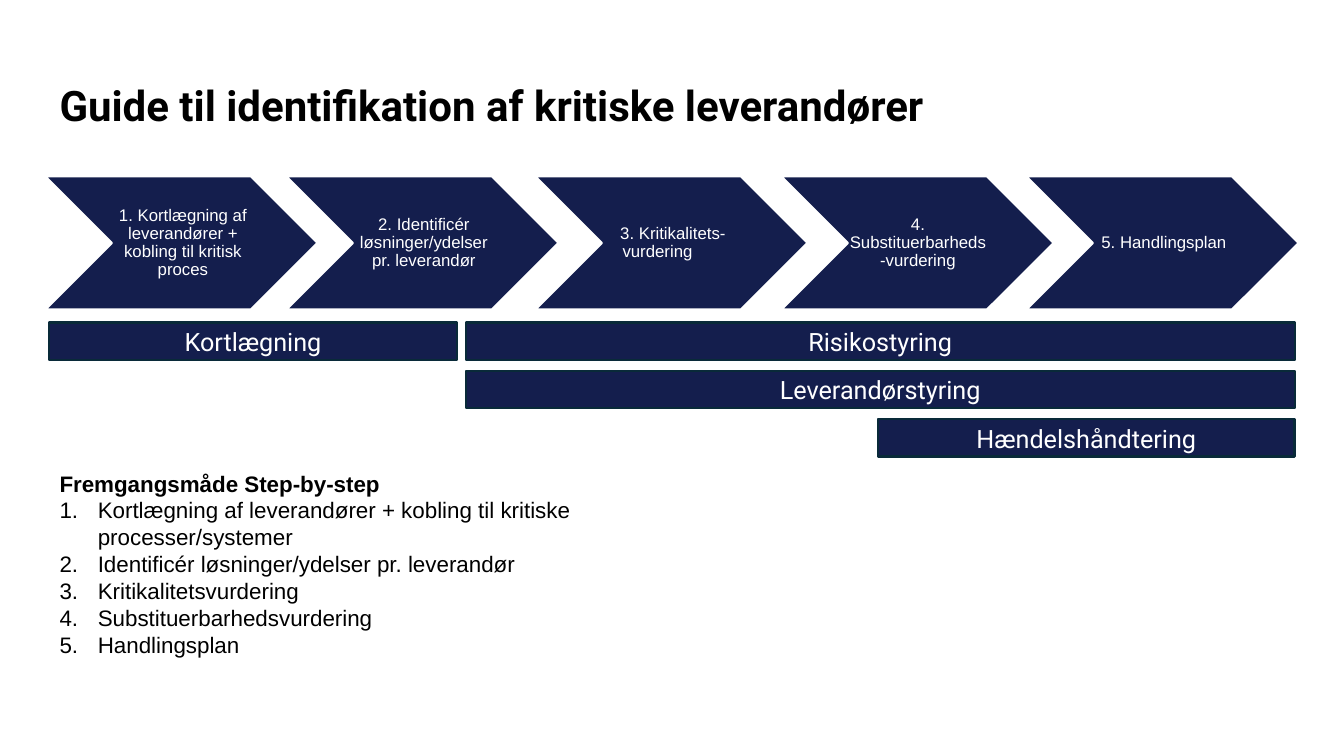
from dataclasses import dataclass

from lxml import etree
from pptx import Presentation
from pptx.dml.color import RGBColor
from pptx.enum.shapes import MSO_SHAPE
from pptx.enum.text import MSO_ANCHOR, MSO_AUTO_SIZE, PP_ALIGN
from pptx.oxml.ns import qn
from pptx.shapes.autoshape import Shape
from pptx.slide import Slide
from pptx.text.text import _Paragraph
from pptx.util import Emu, Pt

CHEVRON, RECTANGLE = MSO_SHAPE.CHEVRON, MSO_SHAPE.RECTANGLE
LEFT, CENTER = PP_ALIGN.LEFT, PP_ALIGN.CENTER
TOP, MIDDLE = MSO_ANCHOR.TOP, MSO_ANCHOR.MIDDLE
NO_AUTO_SIZE = MSO_AUTO_SIZE.NONE
EMU_PER_PX = 9144


@dataclass(frozen=True)
class Theme:
    navy: RGBColor = RGBColor(0x14, 0x1E, 0x4D)
    outline: RGBColor = RGBColor(0x09, 0x2A, 0x39)
    white: RGBColor = RGBColor(0xFF, 0xFF, 0xFF)
    black: RGBColor = RGBColor(0, 0, 0)
    heading_font: str = "Roboto"
    text_font: str = "Arial"
    title_size: int = 30
    bar_size: int = 18
    body_size: int = 16
    step_size: int = 12
    line_width: float = 1.5


@dataclass(frozen=True)
class Box:
    left: int
    top: int
    width: int
    height: int


@dataclass(frozen=True)
class Step:
    left: int
    text: str
    margins: tuple[int, int] = (5, 2)


@dataclass(frozen=True)
class Bar:
    text: str
    left: int
    right: int
    row: int


THEME = Theme()
STEP_TOP, STEP_WIDTH, STEP_HEIGHT = 175, 270, 132
BAR_TOP, BAR_HEIGHT, BAR_PITCH = 320, 37, 48
LIST_INDENT = 38

STEPS = [
    Step(45, "1. Kortlægning af leverandører + kobling til kritisk proces"),
    Step(284, "2. Identificér løsninger/ydelser pr. leverandør"),
    Step(531, "3. Kritikalitets- vurdering\t"),
    Step(775, "4. Substituerbarheds-vurdering", (1, 0)),
    Step(1018, "5. Handlingsplan"),
]
BARS = [
    Bar("Kortlægning", 49, 453, 0),
    Bar("Risikostyring", 462, 1284, 0),
    Bar("Leverandørstyring", 462, 1284, 1),
    Bar("Hændelshåndtering", 871, 1284, 2),
]
LIST_HEADING = "Fremgangsmåde Step-by-step"
LIST_ITEMS = [
    "Kortlægning af leverandører + kobling til kritiske processer/systemer",
    "Identificér løsninger/ydelser pr. leverandør",
    "Kritikalitetsvurdering",
    "Substituerbarhedsvurdering",
    "Handlingsplan",
]


def px(length: int) -> Emu:
    return Emu(length * EMU_PER_PX)


def add_run(paragraph: _Paragraph, text: str, font_name: str, size: int,
            color: RGBColor, bold: bool = False) -> None:
    run = paragraph.add_run()
    run.text = text
    run.font.name = font_name
    run.font.size = Pt(size)
    run.font.bold = bold
    run.font.color.rgb = color


def place(shape: Shape, box: Box) -> None:
    shape.left, shape.top = px(box.left), px(box.top)
    shape.width, shape.height = px(box.width), px(box.height)
    shape.text_frame.word_wrap = True
    shape.text_frame.auto_size = NO_AUTO_SIZE
    shape.text_frame.vertical_anchor = TOP


def add_panel(slide: Slide, kind: MSO_SHAPE, box: Box, line_color: RGBColor) -> Shape:
    shape = slide.shapes.add_shape(
        kind, px(box.left), px(box.top), px(box.width), px(box.height))
    shape.shadow.inherit = False
    shape.fill.solid()
    shape.fill.fore_color.rgb = THEME.navy
    shape.line.color.rgb = line_color
    shape.line.width = Pt(THEME.line_width)
    shape.text_frame.word_wrap = True
    shape.text_frame.vertical_anchor = MIDDLE
    shape.text_frame.paragraphs[0].alignment = CENTER
    return shape


def add_step(slide: Slide, step: Step) -> None:
    box = Box(step.left, STEP_TOP, STEP_WIDTH, STEP_HEIGHT)
    frame = add_panel(slide, CHEVRON, box, THEME.white).text_frame
    frame.margin_left, frame.margin_right = map(px, step.margins)
    frame.margin_top = frame.margin_bottom = px(2)
    paragraph = frame.paragraphs[0]
    paragraph.line_spacing = 0.9
    add_run(paragraph, step.text, THEME.text_font, THEME.step_size, THEME.white)


def add_bar(slide: Slide, bar: Bar) -> None:
    box = Box(bar.left, BAR_TOP + bar.row * BAR_PITCH, bar.right - bar.left, BAR_HEIGHT)
    shape = add_panel(slide, RECTANGLE, box, THEME.outline)
    add_run(shape.text_frame.paragraphs[0], bar.text,
            THEME.heading_font, THEME.bar_size, THEME.white)


def set_numbering(paragraph: _Paragraph, numbered: bool) -> None:
    paragraph.space_before = Pt(0)
    properties = paragraph._p.get_or_add_pPr()
    indent = px(LIST_INDENT) if numbered else 0
    properties.set("marL", str(indent))
    properties.set("indent", str(-indent))
    if numbered:
        etree.SubElement(properties, qn("a:buAutoNum"), type="arabicPeriod")
    else:
        etree.SubElement(properties, qn("a:buNone"))


def fill_title(slide: Slide) -> None:
    title = slide.shapes.title
    place(title, Box(49, 74, 1220, 61))
    paragraph = title.text_frame.paragraphs[0]
    paragraph.alignment = LEFT
    add_run(paragraph, "Guide til identifikation af kritiske leverandører",
            THEME.heading_font, THEME.title_size, THEME.black, bold=True)


def fill_list(slide: Slide) -> None:
    body = slide.placeholders[1]
    place(body, Box(49, 461, 723, 226))
    frame = body.text_frame
    heading = frame.paragraphs[0]
    set_numbering(heading, numbered=False)
    add_run(heading, LIST_HEADING, THEME.text_font, THEME.body_size, THEME.black, bold=True)
    for item in LIST_ITEMS:
        paragraph = frame.add_paragraph()
        set_numbering(paragraph, numbered=True)
        add_run(paragraph, item, THEME.text_font, THEME.body_size, THEME.black)


def main() -> None:
    presentation = Presentation()
    presentation.slide_width, presentation.slide_height = px(1333), px(750)
    slide = presentation.slides.add_slide(presentation.slide_layouts[1])
    fill_title(slide)
    fill_list(slide)
    for step in STEPS:
        add_step(slide, step)
    for bar in BARS:
        add_bar(slide, bar)
    presentation.save("out.pptx")


if __name__ == "__main__":
    main()
